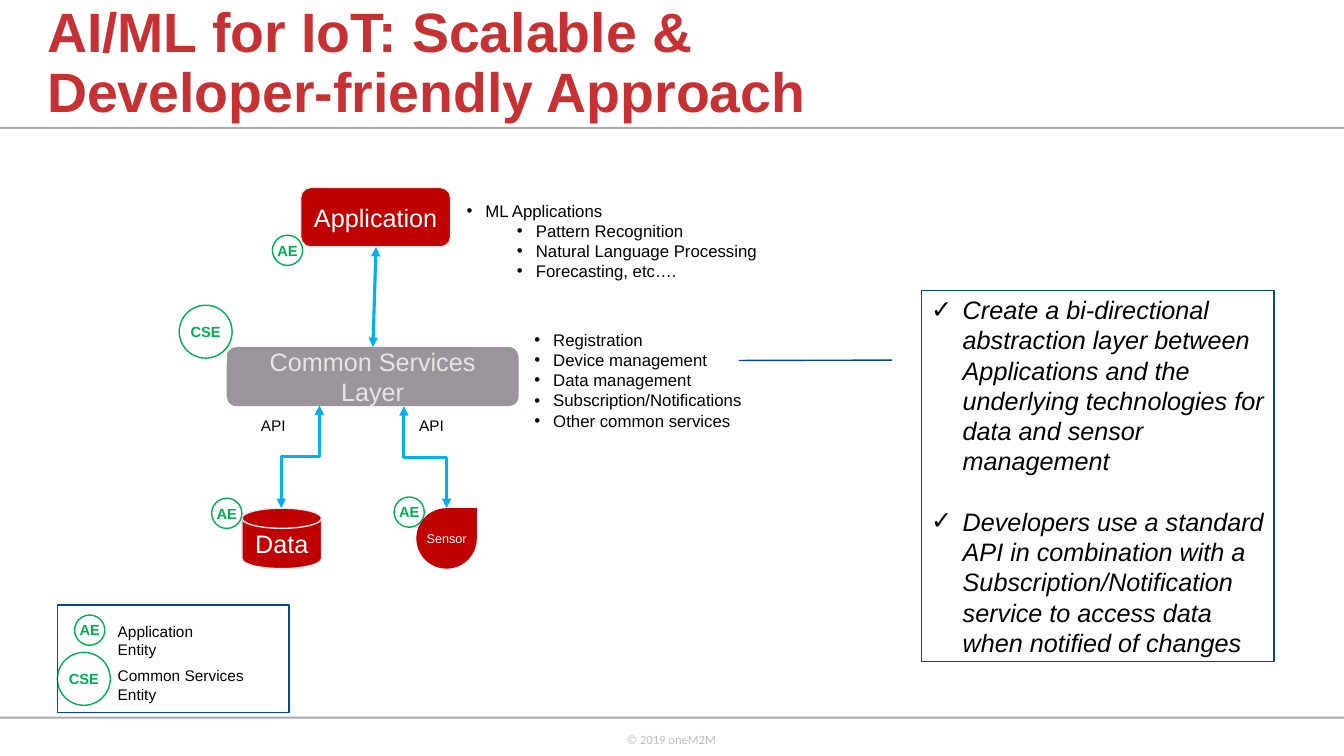
"""Build the slide on a scalable, developer-friendly approach to AI/ML for IoT."""
from dataclasses import dataclass
from typing import Optional

from lxml import etree
from pptx import Presentation
from pptx.dml.color import RGBColor
from pptx.enum.shapes import MSO_CONNECTOR, MSO_SHAPE
from pptx.enum.text import MSO_ANCHOR, PP_ALIGN
from pptx.oxml.ns import qn
from pptx.util import Pt

RECTANGLE = MSO_SHAPE.RECTANGLE
ROUNDED = MSO_SHAPE.ROUNDED_RECTANGLE
ELLIPSE = MSO_SHAPE.OVAL
DISK = MSO_SHAPE.FLOWCHART_MAGNETIC_DISK
TEARDROP = MSO_SHAPE.TEAR
CALLOUT = MSO_SHAPE.LINE_CALLOUT_1
STRAIGHT = MSO_CONNECTOR.STRAIGHT
ELBOW = MSO_CONNECTOR.ELBOW
LEFT = PP_ALIGN.LEFT
CENTER = PP_ALIGN.CENTER
TOP = MSO_ANCHOR.TOP
MIDDLE = MSO_ANCHOR.MIDDLE

BLACK, WHITE, RED, GRAY = "000000", "FFFFFF", "C00000", "9A959A"
PALE, RULE_GRAY, GREEN, BLUE, NAVY = "E7E6E6", "A7A9AC", "00B050", "00B0F0", "004A8D"


@dataclass(frozen=True)
class Style:
    size: float
    color: str = BLACK
    bold: bool = False
    italic: bool = False
    align: PP_ALIGN = LEFT
    anchor: MSO_ANCHOR = TOP
    side_margin: float = 7.2
    wrap: bool = True
    font: str = "Arial"
    line_spacing: Optional[float] = None


@dataclass(frozen=True)
class Item:
    text: str
    bullet: str = ""
    indent: float = 0
    hanging: float = 13.5
    space_before: float = 0


@dataclass(frozen=True)
class Box:
    left: float
    top: float
    width: float
    height: float
    style: Style
    items: tuple[Item, ...] = ()
    kind: Optional[MSO_SHAPE] = None
    fill: str = ""
    line: str = ""
    adjustments: tuple[float, ...] = ()


@dataclass(frozen=True)
class Arrow:
    kind: MSO_CONNECTOR
    x1: float
    y1: float
    x2: float
    y2: float


def rgb(value: str) -> RGBColor:
    return RGBColor.from_string(value)


def add_item(paragraph, item: Item, style: Style) -> None:
    if item.bullet:
        properties = paragraph._p.get_or_add_pPr()
        properties.set("marL", str(Pt(item.indent)))
        properties.set("indent", str(-Pt(item.hanging)))
        etree.SubElement(properties, qn("a:buFont")).set("typeface", "Arial")
        etree.SubElement(properties, qn("a:buChar")).set("char", item.bullet)
    paragraph.alignment = style.align
    if style.line_spacing:
        paragraph.line_spacing = style.line_spacing
    if item.space_before:
        paragraph.space_before = Pt(item.space_before)
    run = paragraph.add_run()
    run.text = item.text
    run.font.name = style.font
    run.font.size = Pt(style.size)
    run.font.bold = style.bold
    run.font.italic = style.italic
    run.font.color.rgb = rgb(style.color)


def add_box(slide, box: Box) -> None:
    frame = [Pt(value) for value in (box.left, box.top, box.width, box.height)]
    if box.kind is None:
        shape = slide.shapes.add_textbox(*frame)
    else:
        shape = slide.shapes.add_shape(box.kind, *frame)
        shape.shadow.inherit = False
        for index, value in enumerate(box.adjustments):
            shape.adjustments[index] = value
        if box.fill:
            shape.fill.solid()
            shape.fill.fore_color.rgb = rgb(box.fill)
        else:
            shape.fill.background()
        if box.line:
            shape.line.color.rgb = rgb(box.line)
            shape.line.width = Pt(1)
        else:
            shape.line.fill.background()
    text_frame = shape.text_frame
    text_frame.word_wrap = box.style.wrap
    text_frame.vertical_anchor = box.style.anchor
    text_frame.margin_left = text_frame.margin_right = Pt(box.style.side_margin)
    for index, item in enumerate(box.items):
        paragraph = text_frame.add_paragraph() if index else text_frame.paragraphs[0]
        add_item(paragraph, item, box.style)


def add_arrow(slide, arrow: Arrow) -> None:
    x1, y1, x2, y2 = arrow.x1, arrow.y1, arrow.x2, arrow.y2
    if arrow.kind == ELBOW:
        middle_x, middle_y = (x1 + x2) / 2, (y1 + y2) / 2
        half = (y1 - y2) / 2
        x1, y1, x2, y2 = (middle_x - half, middle_y + x1 - middle_x,
                          middle_x + half, middle_y + x2 - middle_x)
    connector = slide.shapes.add_connector(arrow.kind, Pt(x1), Pt(y1), Pt(x2), Pt(y2))
    connector.line.color.rgb = rgb(BLUE)
    connector.line.width = Pt(2.25)
    properties = connector._element.spPr
    if arrow.kind == ELBOW:
        properties.find(qn("a:xfrm")).set("rot", str(270 * 60000))
    line = properties.find(qn("a:ln"))
    for end in ("a:headEnd", "a:tailEnd"):
        etree.SubElement(line, qn(end)).set("type", "triangle")
    etree.SubElement(properties, qn("a:effectLst"))


def badge(text: str, left: float, top: float) -> Box:
    diameter = 21.6 if text == "AE" else 37.8
    return Box(left, top, diameter, diameter, BADGE, (Item(text),), ELLIPSE, line=GREEN)


def bullets(indent: float, *texts: str) -> tuple[Item, ...]:
    return tuple(Item(text, "•", indent) for text in texts)


TITLE = Style(39.6, "C63133", bold=True, anchor=MIDDLE, line_spacing=0.9)
FOOTER = Style(9, "BFBFBF", wrap=False, font="Calibri")
NODE = Style(18, WHITE, align=CENTER, anchor=MIDDLE)
LAYER = Style(18, PALE, align=CENTER, anchor=MIDDLE)
SENSOR = Style(9, WHITE, align=CENTER, anchor=MIDDLE, side_margin=0)
BADGE = Style(10.5, GREEN, bold=True, align=CENTER, anchor=MIDDLE, side_margin=0)
BENEFIT = Style(18, italic=True, anchor=MIDDLE)
LIST = Style(12)
LABEL = Style(11)

ML_APPLICATIONS = bullets(13.5, "ML Applications") + bullets(
    49.5, "Pattern Recognition", "Natural Language Processing", "Forecasting, etc….")
SERVICES = bullets(13.5, "Registration", "Device management", "Data management",
                   "Subscription/Notifications", "Other common services")
BENEFITS = (
    Item("Create a bi-directional abstraction layer between Applications and the "
         "underlying technologies for data and sensor management", "✓", 22.5, 22.5),
    Item("Developers use a standard API in combination with a Subscription/Notification "
         "service to access data when notified of changes", "✓", 22.5, 22.5, 21.6),
)

BACK_BOXES = (
    Box(0, 90.7, 960, 1.4, LABEL, kind=RECTANGLE, fill=RULE_GRAY),
    Box(0, 511.9, 960, 1.4, LABEL, kind=RECTANGLE, fill=RULE_GRAY),
    Box(440.6, 519.1, 79.2, 28.8, FOOTER, (Item("© 2019 oneM2M"),)),
    Box(26.6, 0, 667.4, 92.2, TITLE,
        (Item("AI/ML for IoT: Scalable & Developer-friendly Approach"),)),
    Box(172.8, 363, 56.9, 43.2, NODE, (Item("Data"),), DISK, RED, PALE),
    Box(214.8, 134, 107, 42.4, NODE, (Item("Application"),), ROUNDED, RED, PALE),
    Box(326.2, 139.7, 223.2, 65.5, LIST, ML_APPLICATIONS),
    Box(297.4, 363, 43.2, 43.2, SENSOR, (Item("Sensor"),), TEARDROP, RED),
)
ARROWS = (
    Arrow(STRAIGHT, 266.4, 247.9, 268.6, 176.4),
    Arrow(ELBOW, 319, 362.9, 288.5, 290.2),
    Arrow(ELBOW, 200.9, 362.9, 228.2, 289.6),
)
FRONT_BOXES = (
    Box(658.1, 207.4, 252, 265, BENEFIT, BENEFITS, CALLOUT, WHITE, NAVY,
        (0.188, -0.083, 0.189, -0.517)),
    Box(179.3, 293.8, 36, 20.9, LABEL, (Item("API"),)),
    Box(292.3, 293.8, 36, 20.9, LABEL, (Item("API"),)),
    Box(162, 247.9, 208.4, 42.3, LAYER, (Item("Common Services Layer"),), ROUNDED, GRAY),
    Box(374.6, 232, 170, 80, LIST, SERVICES),
    badge("AE", 281.5, 355),
    badge("AE", 151.2, 355.9),
    badge("AE", 194.6, 168),
    badge("CSE", 128, 218),
    badge("CSE", 41, 466),
    badge("AE", 53.3, 439.3),
    Box(77, 440.6, 94.3, 20.9, LABEL, (Item("Application Entity"),)),
    Box(77, 472.3, 123.1, 20.9, LABEL, (Item("Common Services Entity"),)),
    Box(41, 432.2, 165.6, 77, LABEL, kind=RECTANGLE, line=NAVY),
)


def main() -> None:
    presentation = Presentation()
    presentation.slide_width, presentation.slide_height = Pt(960), Pt(540)
    slide = presentation.slides.add_slide(presentation.slide_layouts[6])
    for box in BACK_BOXES:
        add_box(slide, box)
    for arrow in ARROWS:
        add_arrow(slide, arrow)
    for box in FRONT_BOXES:
        add_box(slide, box)
    presentation.save("out.pptx")


if __name__ == "__main__":
    main()
